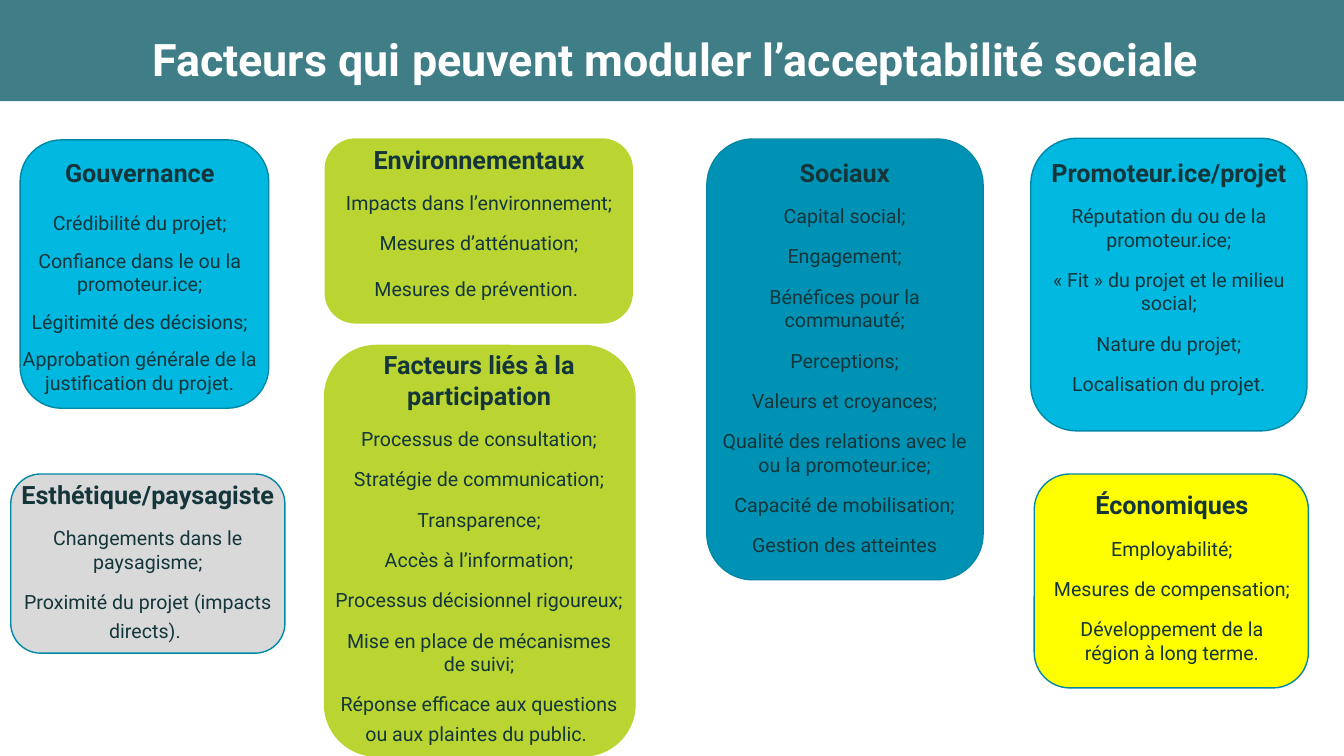
from lxml import etree
from pptx import Presentation
from pptx import util as u
from pptx.dml import color
from pptx.enum import shapes, text
from pptx.oxml import ns

COLORS = {
    "band": "296F79", "title": "FFFFFF", "ink": "14363B", "edge": "0088A6",
    "cyan": "00B8E0", "grey": "D9D9D9", "lime": "BAD532", "blue": "0092B4",
    "yellow": "FFFF00",
}
HEADING = {"name": "Roboto", "size": u.Pt(18), "bold": True}
BODY = {"name": "Roboto", "size": u.Pt(14), "bold": False}
TITLE = {"name": "Roboto", "size": u.Pt(32), "bold": True}
CLOSING = {"name": "Calibri", "size": u.Pt(18), "bold": False}
CENTERED = {"alignment": text.PP_ALIGN.CENTER}
FRAME = {"word_wrap": True, "auto_size": text.MSO_AUTO_SIZE.NONE,
         "vertical_anchor": text.MSO_ANCHOR.TOP}

FACTORS = [
    {"fill": "cyan", "edge": "edge", "box": (1.5, 18.5, 18.5, 35.5),
     "frame": (0.8, 20.1, 19.2, 36.8), "heading": "Gouvernance",
     "first_gap": 17, "gap": 10,
     "items": ["Crédibilité du projet;", "Confiance dans le ou la promoteur.ice;",
               "Légitimité des décisions;",
               "Approbation générale de la justification du projet."]},
    {"fill": "grey", "edge": "edge", "box": (0.8, 62.7, 20.4, 23.7),
     "frame": (0.8, 62.7, 20.4, 23.3), "heading": "Esthétique/paysagiste",
     "closing": True,
     "items": ["Changements dans le paysagisme;",
               "Proximité du projet (impacts directs)."]},
    {"fill": "lime", "box": (24.15, 18.3, 22.95, 24.5),
     "frame": (24.15, 18.4, 23, 22.9), "heading": "Environnementaux",
     "closing": True,
     "items": ["Impacts dans l’environnement;", "Mesures d’atténuation;",
               "Mesures de prévention."]},
    {"fill": "lime", "edge": "lime", "box": (24.15, 45.7, 23.1, 54.3),
     "frame": (24.1, 45.6, 23.1, 54.3), "heading": "Facteurs liés à la participation",
     "closing": True,
     "items": ["Processus de consultation;", "Stratégie de communication;",
               "Transparence;", "Accès à l’information;",
               "Processus décisionnel rigoureux;",
               "Mise en place de mécanismes\nde suivi;",
               "Réponse efficace aux questions ou aux plaintes du public."]},
    {"fill": "cyan", "edge": "edge", "box": (76.7, 18.3, 20.55, 38.7),
     "frame": (76.7, 20.1, 20.55, 40.4), "heading": "Promoteur.ice/projet",
     "items": ["Réputation du ou de la promoteur.ice;",
               "« Fit » du projet et le milieu social;",
               "Nature du projet;", "Localisation du projet."]},
    {"fill": "blue", "edge": "edge", "box": (52.6, 18.4, 20.55, 58.3),
     "frame": (52.65, 20.1, 20.4, 54.8), "heading": "Sociaux",
     "items": ["Capital social;", "Engagement;", "Bénéfices pour la communauté;",
               "Perceptions;", "Valeurs et croyances;",
               "Qualité des relations avec le ou la promoteur.ice;",
               "Capacité de mobilisation;", "Gestion des atteintes"]},
    {"fill": "yellow", "edge": "edge", "box": (76.95, 62.7, 20.4, 28.3),
     "frame": (77.6, 64.1, 19.2, 29.6), "heading": "Économiques",
     "items": ["Employabilité;", "Mesures de compensation;",
               "Développement de la région à long terme."]},
]


def apply(target, values):
    for name, value in values.items():
        setattr(target, name, value)


def rgb(name):
    return color.RGBColor.from_string(COLORS[name])


class FactorSlide:
    def __init__(self, prs):
        self.width, self.height = prs.slide_width, prs.slide_height
        self.s = prs.slides.add_slide(prs.slide_layouts[5])

    def place(self, percents):
        sizes = (self.width, self.height) * 2
        return [round(size * share / 100) for size, share in zip(sizes, percents)]

    def shape(self, kind, percents, fill, edge=None):
        sp = self.s.shapes.add_shape(kind, *self.place(percents))
        sp.shadow.inherit = False
        sp.fill.solid()
        sp.fill.fore_color.rgb = rgb(fill)
        if edge:
            sp.line.color.rgb = rgb(edge)
            sp.line.width = u.Pt(1)
        else:
            sp.line.fill.background()
        return sp

    def run(self, p, words, style, ink="ink"):
        r = p.add_run()
        r.text = words
        apply(r.font, style)
        r.font.color.rgb = rgb(ink)

    def title(self, words, percents):
        sp = self.s.shapes.title
        apply(sp, dict(zip(("left", "top", "width", "height"), self.place(percents))))
        apply(sp.text_frame, FRAME)
        p = sp.text_frame.paragraphs[0]
        apply(p, {**CENTERED, "line_spacing": 0.9})
        self.run(p, words, TITLE, "title")

    def band(self, percents, opacity):
        sp = self.shape(shapes.MSO_SHAPE.RECTANGLE, percents, "band")
        tint = sp.element.find(".//" + ns.qn("a:srgbClr"))
        etree.SubElement(tint, ns.qn("a:alpha"), val=str(opacity * 1000))
        self.s.shapes.title.element.addprevious(sp.element)

    def card(self, fill, box, frame, heading, items, edge=None,
             first_gap=12, gap=12, closing=False):
        self.shape(shapes.MSO_SHAPE.ROUNDED_RECTANGLE, box, fill, edge)
        tf = self.s.shapes.add_textbox(*self.place(frame)).text_frame
        apply(tf, FRAME)
        p = tf.paragraphs[0]
        apply(p, CENTERED)
        self.run(p, heading, HEADING)
        for i, item in enumerate(items):
            for j, line in enumerate(item.split("\n")):
                space = 0 if j else gap if i else first_gap
                p = tf.add_paragraph()
                apply(p, {**CENTERED, "space_before": u.Pt(space)})
                self.run(p, line, BODY)
        if closing:
            self.run(p, " ", CLOSING, "band")


def main():
    prs = Presentation()
    apply(prs, {"slide_width": u.Inches(13.33), "slide_height": u.Inches(7.5)})
    s = FactorSlide(prs)
    s.title("Facteurs qui peuvent moduler l’acceptabilité sociale", (1.5, 4.3, 97.6, 11.9))
    s.band((-0.3, -0.1, 100.4, 13.5), 89)
    for factor in FACTORS:
        s.card(**factor)
    prs.save("out.pptx")


if __name__ == "__main__":
    main()
